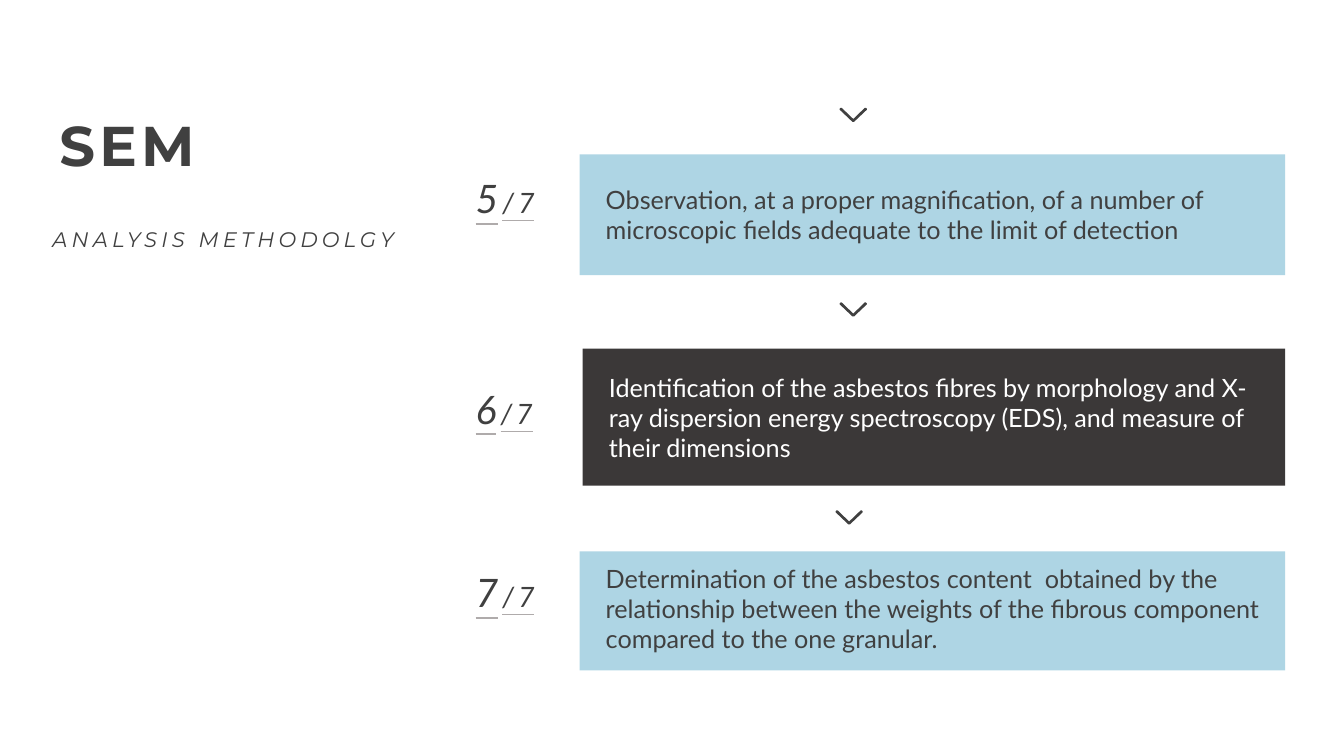
"""Builds the slide with the last three steps of the SEM analysis methodology."""
from lxml.etree import SubElement
from pptx import Presentation
from pptx.dml.color import RGBColor
from pptx.enum.shapes import MSO_SHAPE
from pptx.enum.text import MSO_ANCHOR, MSO_AUTO_SIZE, PP_ALIGN
from pptx.oxml.ns import qn
from pptx.util import Pt

GREY, DARK, BLUE, WHITE, UNDERLINE = "404040", "3B3838", "AED5E4", "FFFFFF", "AFABAB"
CHEVRON = [(9.1, 10), (0, 1.4), (0, 0.7), (0.7, 0), (1.4, 0), (9.7, 8),
           (18, 0), (18.7, 0), (19.4, 0.7), (19.4, 1.4), (10.3, 10)]


def paint(target, color):
    target.solid()
    target.fore_color.rgb = RGBColor.from_string(color)


def add_span(para, text, size, font, color=GREY, spacing=0, underline=None):
    span = para.add_run()
    span.text = text
    span.font.size = Pt(size)
    paint(span.font.fill, color)
    props = span.font._element
    if spacing:
        props.set("spc", str(spacing * 100))
    if underline:
        span.font.underline = True
        fill = SubElement(SubElement(props, qn("a:uFill")), qn("a:solidFill"))
        SubElement(fill, qn("a:srgbClr")).set("val", underline)
    span.font.name = font
    return span


deck = Presentation()
deck.slide_width, deck.slide_height = Pt(960), Pt(540)
page = deck.slides.add_slide(deck.slide_layouts[0])

headings = [
    (page.shapes.title, "SEM", 40, (35.3, 75.6, 918, 55.7)),
    (page.placeholders[1], "ANALYSIS METHODOLGY", 15, (30.2, 158.4, 528, 25.4)),
]
for holder, text, size, place in headings:
    holder.left, holder.top, holder.width, holder.height = map(Pt, place)
    frame = holder.text_frame
    frame.auto_size = MSO_AUTO_SIZE.NONE
    frame.vertical_anchor = MSO_ANCHOR.TOP
    para = frame.paragraphs[0]
    para.alignment = PP_ALIGN.LEFT
    para.space_before = Pt(0)
    span = add_span(para, text, size, "Montserrat", spacing=3)
    span.font.bold = holder == page.shapes.title
    span.font.italic = not span.font.bold

steps = [
    ("5", "Observation, at a proper magnification, of a number of microscopic fields "
          "adequate to the limit of detection",
     BLUE, GREY, 414, 110.2, 86.4, 121, (599.8, 77), 3.6),
    ("6", "Identification of the asbestos fibres by morphology and X-ray dispersion "
          "energy spectroscopy (EDS), and measure of their dimensions",
     DARK, WHITE, 416.2, 249.1, 97.9, 271.4, (599.8, 216), 3.6),
    ("7", "Determination of the asbestos content  obtained by the relationship between "
          "the weights of the fibrous component compared to the one granular.",
     BLUE, GREY, 414, 393.8, 85, 402.5, (596.9, 364.5), 7.2),
]
for number, text, fill, ink, left, top, height, number_top, corner, bottom in steps:
    points = [(Pt(corner[0] + x), Pt(corner[1] + y)) for x, y in CHEVRON]
    builder = page.shapes.build_freeform(*points[0])
    builder.add_line_segments(points[1:], close=True)
    chevron = builder.convert_to_shape()
    chevron.shadow.inherit = False
    paint(chevron.fill, GREY)
    chevron.line.fill.background()

    box = page.shapes.add_shape(MSO_SHAPE.RECTANGLE, Pt(left), Pt(top), Pt(918 - left), Pt(height))
    box.shadow.inherit = False
    paint(box.fill, fill)
    box.line.fill.background()
    frame = box.text_frame
    frame.word_wrap = True
    frame.vertical_anchor = MSO_ANCHOR.MIDDLE
    frame.margin_left = Pt(18.7)
    frame.margin_bottom = Pt(bottom)
    para = frame.paragraphs[0]
    para.alignment = PP_ALIGN.LEFT
    add_span(para, text, 18, "Lato", ink)

    counter = page.shapes.add_textbox(Pt(332.6), Pt(number_top), Pt(69.8), Pt(41))
    counter.text_frame.word_wrap = True
    para = counter.text_frame.paragraphs[0]
    for part, size in [(number, 28), ("/7", 20)]:
        add_span(para, part, size, "Lato", spacing=3, underline=UNDERLINE).font.italic = True

deck.save("out.pptx")
